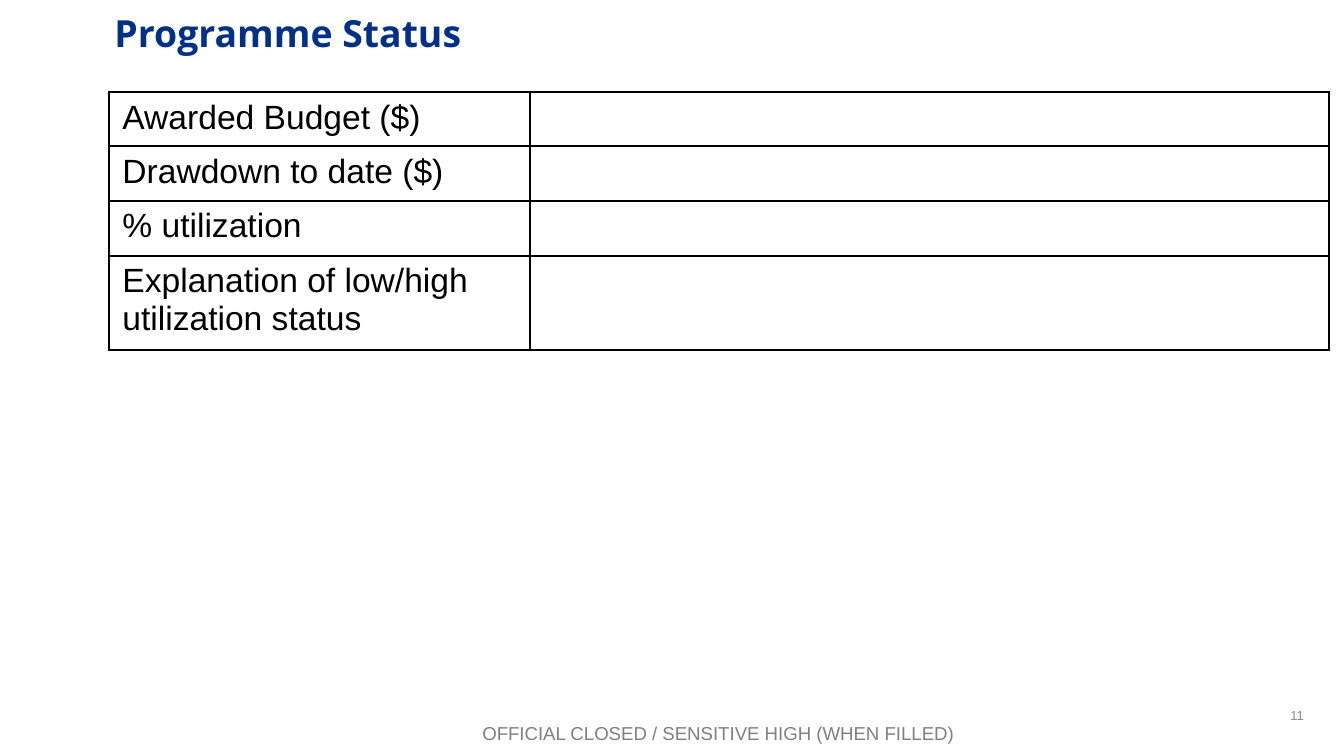
from lxml import etree
from pptx import Presentation
from pptx.dml.color import RGBColor
from pptx.enum.text import MSO_ANCHOR, MSO_AUTO_SIZE, PP_ALIGN
from pptx.oxml.ns import qn
from pptx.util import Emu, Pt

LEFT, CENTER, RIGHT = PP_ALIGN.LEFT, PP_ALIGN.CENTER, PP_ALIGN.RIGHT
TOP, MIDDLE = MSO_ANCHOR.TOP, MSO_ANCHOR.MIDDLE
NO_AUTOFIT = MSO_AUTO_SIZE.NONE
TITLE_ONLY = 5
PX_PER_INCH = 134.4
SLIDE_SIZE = (1344, 756)

BODY_FONT, TITLE_FONT = "Arial", "Open Sans"
NAVY, BLACK, GREY, LIGHT_GREY = "003087", "000000", "808080", "8C8C8C"

STATUS_ROWS = [
    ("Awarded Budget ($)", 50),
    ("Drawdown to date ($)", 55),
    ("% utilization", 55),
    ("Explanation of low/high utilization status", 88),
]
COLUMN_WIDTHS = (421, 799)


def px(length):
    return Emu(round(length * 914400 / PX_PER_INCH))


def color(hex_value):
    return RGBColor.from_string(hex_value)


class SlideBuilder:
    def __init__(self, presentation):
        layout = presentation.slide_layouts[TITLE_ONLY]
        self.slide = presentation.slides.add_slide(layout)

    def style(self, text_frame, size, hex_value, font=BODY_FONT, bold=False, align=LEFT):
        for paragraph in text_frame.paragraphs:
            paragraph.alignment = align
            for run in paragraph.runs:
                run.font.name = font
                run.font.size = Pt(size)
                run.font.bold = bold
                run.font.color.rgb = color(hex_value)

    def title(self, text, left, top, width, height):
        shape = self.slide.shapes.title
        shape.left, shape.top = px(left), px(top)
        shape.width, shape.height = px(width), px(height)
        text_frame = shape.text_frame
        text_frame.text = text
        text_frame.vertical_anchor = TOP
        text_frame.auto_size = NO_AUTOFIT
        text_frame.paragraphs[0].line_spacing = 0.9
        self.style(text_frame, 20, NAVY, TITLE_FONT, bold=True)

    def text(self, text, left, top, width, height, size, hex_value, align, anchor=TOP):
        shape = self.slide.shapes.add_textbox(px(left), px(top), px(width), px(height))
        text_frame = shape.text_frame
        text_frame.word_wrap = True
        text_frame.vertical_anchor = anchor
        text_frame.text = text
        self.style(text_frame, size, hex_value, align=align)

    def border(self, cell, hex_value, width):
        """Draw all four edges; they must precede the fill in the cell XML."""
        properties = cell._tc.get_or_add_tcPr()
        for index, edge in enumerate(("a:lnL", "a:lnR", "a:lnT", "a:lnB")):
            line = etree.Element(qn(edge), w=str(Pt(width)))
            fill = etree.SubElement(line, qn("a:solidFill"))
            etree.SubElement(fill, qn("a:srgbClr"), val=hex_value)
            properties.insert(index, line)

    def label_table(self, rows, column_widths, left, top):
        """Put labels in the first column and leave the others blank."""
        height = sum(row_height for _, row_height in rows)
        table = self.slide.shapes.add_table(
            len(rows), len(column_widths),
            px(left), px(top), px(sum(column_widths)), px(height),
        ).table
        table.first_row = False
        table.horz_banding = False
        for column, width in zip(table.columns, column_widths):
            column.width = px(width)
        for row, (label, row_height) in zip(table.rows, rows):
            row.height = px(row_height)
            row.cells[0].text_frame.text = label
            for cell in row.cells:
                cell.fill.background()
                self.border(cell, BLACK, 1)
                self.style(cell.text_frame, 18, BLACK)


def main():
    presentation = Presentation()
    presentation.slide_width, presentation.slide_height = map(px, SLIDE_SIZE)
    builder = SlideBuilder(presentation)
    builder.text("11", 1004, 695, 313, 40, 7, LIGHT_GREY, RIGHT, MIDDLE)
    builder.text("OFFICIAL CLOSED / SENSITIVE HIGH (WHEN FILLED)",
                 91, 715, 1254, 36, 10, GREY, CENTER)
    builder.title("Programme Status", 101, 9, 1164, 106)
    builder.label_table(STATUS_ROWS, COLUMN_WIDTHS, 109, 92)
    presentation.save("out.pptx")


if __name__ == "__main__":
    main()
